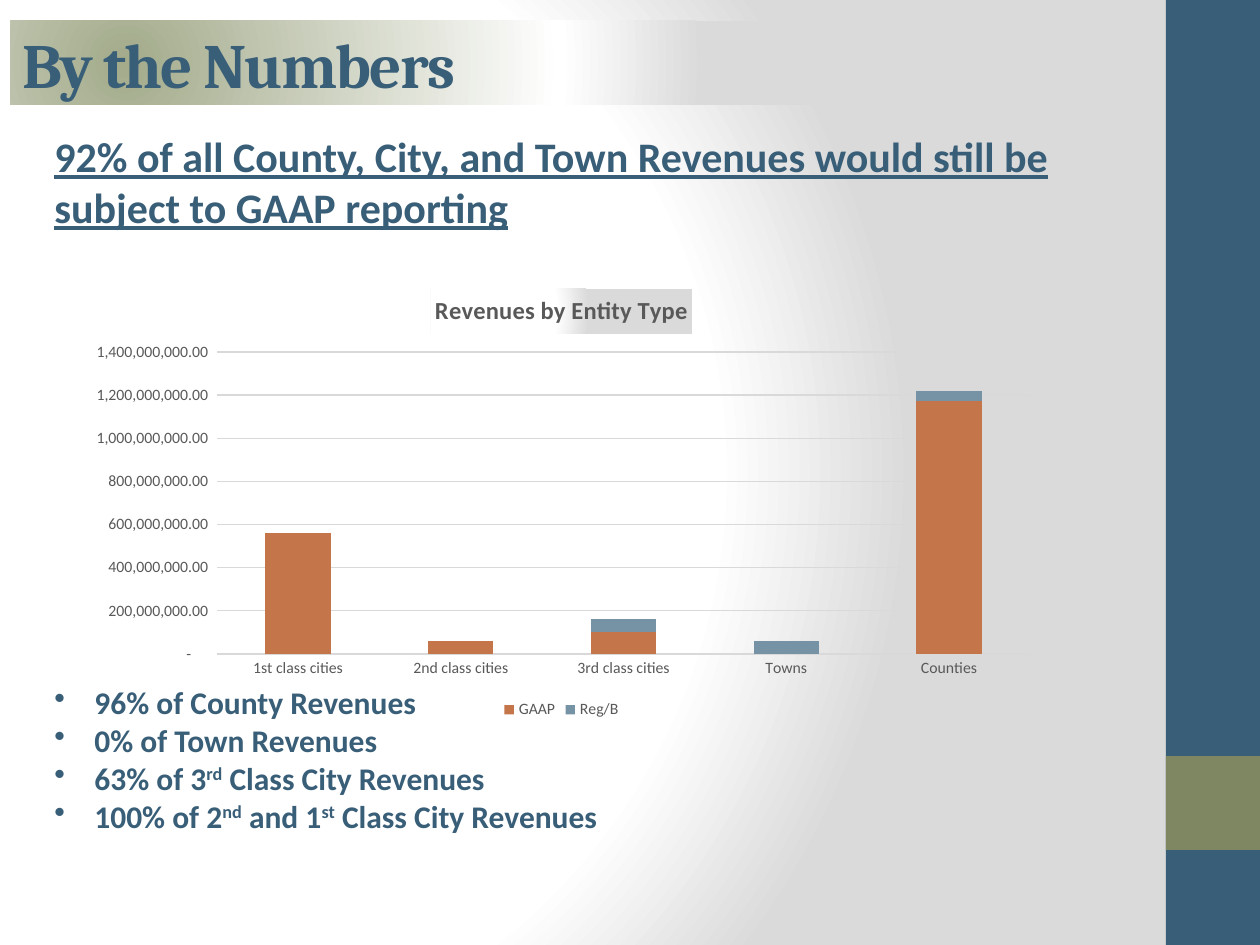
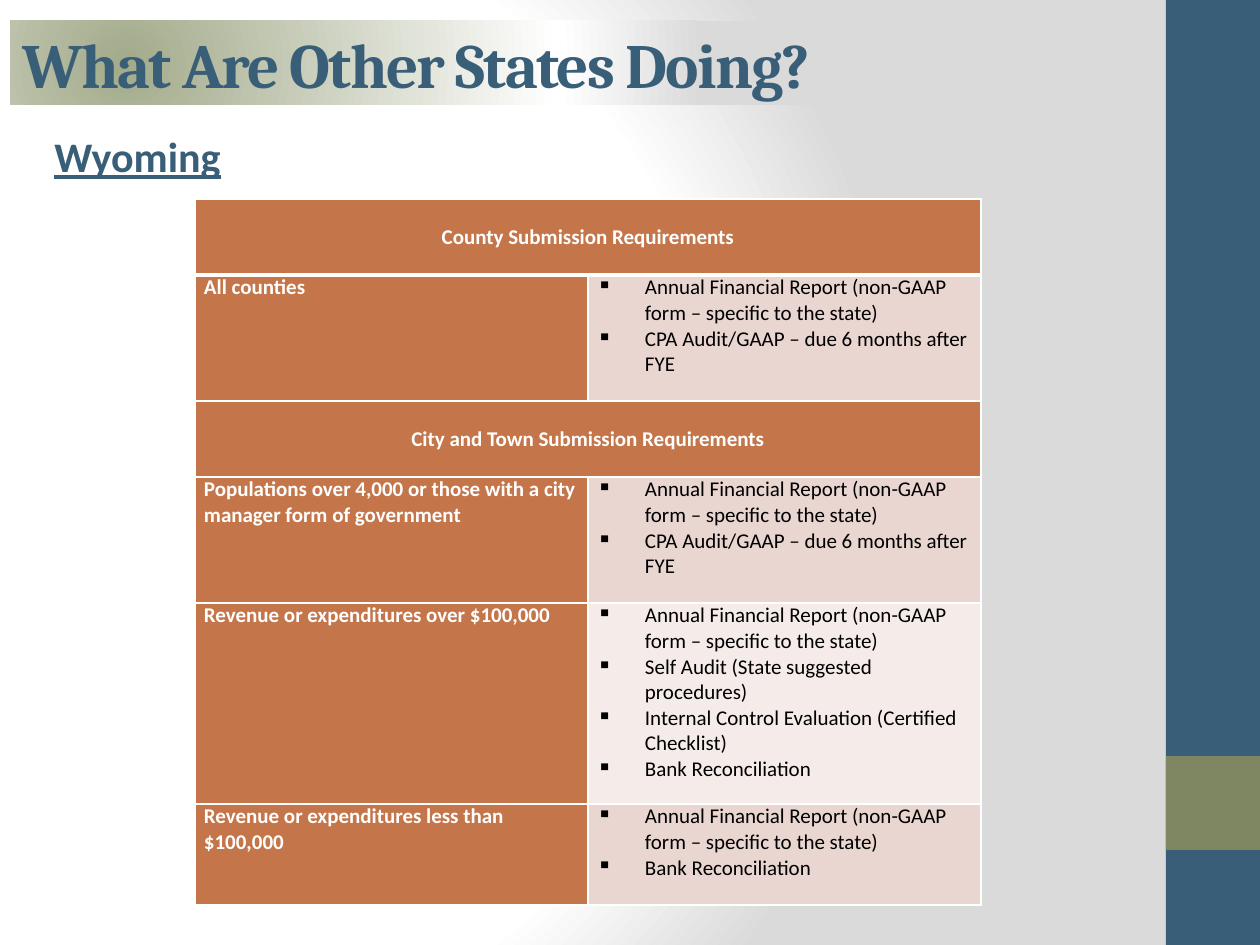
from lxml import etree
from pptx import Presentation
from pptx.chart.data import CategoryChartData
from pptx.dml.color import RGBColor
from pptx.enum.chart import XL_CHART_TYPE, XL_LEGEND_POSITION, XL_TICK_MARK
from pptx.enum.shapes import MSO_SHAPE
from pptx.enum.text import MSO_ANCHOR, MSO_AUTO_SIZE, PP_ALIGN
from pptx.oxml import parse_xml
from pptx.oxml.ns import nsdecls, qn
from pptx.util import Pt

RECT = MSO_SHAPE.RECTANGLE
STACKED = XL_CHART_TYPE.COLUMN_STACKED
BOTTOM = XL_LEGEND_POSITION.BOTTOM
NO_TICK = XL_TICK_MARK.NONE
MIDDLE, TOP = MSO_ANCHOR.MIDDLE, MSO_ANCHOR.TOP
FIXED = MSO_AUTO_SIZE.NONE
LEFT, CENTER = PP_ALIGN.LEFT, PP_ALIGN.CENTER

SCALE = 914400 / 126
WIDE, HIGH = 1260, 945
HEAD, BODY = "Cambria", "Calibri"
HUES = {
    "navy": "395E78", "olive": "7E8762", "sage": "A3AB8B",
    "white": "FFFFFF", "mist": "DADADA", "rule": "D9D9D9",
    "gray": "595959", "black": "000000", "rust": "C4764A",
    "steel": "7593A5", "rose": "EAD6D0", "blush": "F5ECE9",
}
BANDS = [("navy", 0, HIGH), ("olive", 756, 94)]
BAND_X = 1166

NUMBERS = {
    "title": "By the Numbers",
    "lead": "92% of all County, City, and Town Revenues would still be "
            "subject to GAAP reporting",
    # A leading ^ marks a superscript run.
    "points": [
        ["96% of County Revenues"],
        ["0% of Town Revenues"],
        ["63% of 3", "^rd", " Class City Revenues"],
        ["100% of 2", "^nd", " and 1", "^st", " Class City Revenues"],
    ],
}
CHART = {
    "title": "Revenues by Entity Type",
    "box": (73, 273, 977, 451),
    "plot": (217, 352, 814, 302),
    "cats": ["1st class cities", "2nd class cities", "3rd class cities",
             "Towns", "Counties"],
    "series": [
        ("GAAP", "rust", [560e6, 60e6, 100e6, 0, 1170e6]),
        ("Reg/B", "steel", [0, 0, 60e6, 60e6, 50e6]),
    ],
    "format": '_(* #,##0.00_);_(* \\(#,##0.00\\);_(* "-"??_);_(@_)',
}

REPORT = "Annual Financial Report (non-GAAP form – specific to the state)"
AUDIT = "CPA Audit/GAAP – due 6 months after FYE"
BANK = "Bank Reconciliation"
STATES = {"title": "What Are Other States Doing?", "lead": "Wyoming"}
TABLE_X, TABLE_Y, COL = 195, 199, 393
# Height, label, fill of the right cell, items; a row without items is a heading.
ROWS = [
    (76, "County Submission Requirements", None, []),
    (126, "All counties", "rose", [REPORT, AUDIT]),
    (76, "City and Town Submission Requirements", None, []),
    (126, "Populations over 4,000 or those with a city manager form of "
          "government", "rose", [REPORT, AUDIT]),
    (201, "Revenue or expenditures over $100,000", "blush",
     [REPORT, "Self Audit (State suggested procedures)",
      "Internal Control Evaluation (Certified Checklist)", BANK]),
    (101, "Revenue or expenditures less than $100,000", "rose",
     [REPORT, BANK]),
]


def px(*vals):
    return [round(v * SCALE) for v in vals]


def rgb(hue):
    return RGBColor.from_string(HUES[hue])


def paint(fill, hue):
    fill.solid()
    fill.fore_color.rgb = rgb(hue)


def wash(fill, root, hue):
    """Fill with a round gradient; call before root holds any coloured text."""
    fill.solid()
    stops = "".join(
        f'<a:gs pos="{pos}"><a:srgbClr val="{HUES[name]}"/></a:gs>'
        for pos, name in [(0, hue), (75000, "white"), (100000, "mist")])
    grad = parse_xml(
        f'<a:gradFill {nsdecls("a")} rotWithShape="1"><a:gsLst>{stops}</a:gsLst>'
        '<a:path path="circle"><a:fillToRect l="20000" t="50000" r="100000" '
        'b="50000"/></a:path></a:gradFill>')
    old = root.find(".//" + qn("a:solidFill"))
    old.getparent().replace(old, grad)


def style(font, size, hue, bold=False, face=BODY):
    font.size, font.bold, font.name = Pt(size), bold, face
    font.color.rgb = rgb(hue)


def write(para, runs, size, hue, bold=False, face=BODY):
    for text in runs:
        run = para.add_run()
        run.text = text.lstrip("^")
        style(run.font, size, hue, bold, face)
        if text.startswith("^"):
            run._r.get_or_add_rPr().set("baseline", "30000")


def bullet(para, mark, gap):
    props = para._p.get_or_add_pPr()
    props.set("marL", str(px(gap)[0]))
    props.set("indent", str(px(-gap)[0]))
    etree.SubElement(props, qn("a:buChar")).set("char", mark)


def paras(frame, count):
    """Return count paragraphs of a frame that starts with one."""
    return [frame.paragraphs[0]] + [
        frame.add_paragraph() for _ in range(count - 1)]


def start(prs, page, high):
    """Add a slide with its bands, title and body text box."""
    slide = prs.slides.add_slide(prs.slide_layouts[5])
    for hue, y, tall in BANDS:
        band = slide.shapes.add_shape(
            RECT, *px(BAND_X, y, WIDE - BAND_X, tall))
        band.shadow.inherit = False
        paint(band.fill, hue)
        band.line.fill.background()

    title = slide.shapes.title
    title.left, title.top, title.width, title.height = px(10, 21, 1155, 84)
    wash(title.fill, title.element, "sage")
    frame = title.text_frame
    frame.auto_size, frame.vertical_anchor = FIXED, MIDDLE
    para = frame.paragraphs[0]
    para.alignment = LEFT
    write(para, [page["title"]], 36, "navy", True, HEAD)
    para.runs[0]._r.get_or_add_rPr().set("spc", "-100")

    frame = slide.shapes.add_textbox(*px(42, 105, 1113, high)).text_frame
    frame.word_wrap = True
    frame.margin_top = px(26)[0]
    points = page.get("points", [])
    lead, *rest = paras(frame, 1 + len(points))
    write(lead, [page["lead"]], 24, "navy", True)
    lead.runs[0].font.underline = True
    for i, (para, runs) in enumerate(zip(rest, points)):
        para.space_before = Pt(0 if i else 258)
        bullet(para, "•", 40)
        write(para, runs, 18, "navy", True)
    return slide


def place(chart):
    """Fix the inner plot area inside the chart box."""
    x, y, w, h = CHART["box"]
    left, top, wide, tall = CHART["plot"]
    parts = {"x": (left - x) / w, "y": (top - y) / h,
             "w": wide / w, "h": tall / h}
    area = chart.plots[0]._element.getparent()
    for old in area.findall(qn("c:layout")):
        area.remove(old)
    sizes = "".join(f'<c:{k} val="{v:.3f}"/>' for k, v in parts.items())
    area.insert(0, parse_xml(
        f'<c:layout {nsdecls("c")}><c:manualLayout>'
        '<c:layoutTarget val="inner"/><c:xMode val="edge"/>'
        f'<c:yMode val="edge"/>{sizes}</c:manualLayout></c:layout>'))


def add_chart(slide):
    data = CategoryChartData(number_format=CHART["format"])
    data.categories = CHART["cats"]
    for name, _, vals in CHART["series"]:
        data.add_series(name, vals)
    chart = slide.shapes.add_chart(STACKED, *px(*CHART["box"]), data).chart
    style(chart.font, 10, "black")
    chart.has_title = True
    title = chart.chart_title
    title.include_in_layout = False
    wash(title.format.fill, title._element, "white")
    write(title.text_frame.paragraphs[0], [CHART["title"]], 14, "gray", True)

    plot = chart.plots[0]
    plot.gap_width, plot.overlap, plot.vary_by_categories = 150, 100, False
    for series, (_, hue, _) in zip(plot.series, CHART["series"]):
        paint(series.format.fill, hue)
        series.invert_if_negative = False

    cats, vals = chart.category_axis, chart.value_axis
    for axis in (cats, vals):
        axis.major_tick_mark = axis.minor_tick_mark = NO_TICK
        style(axis.tick_labels.font, 9, "gray")
    vals.minimum_scale, vals.maximum_scale, vals.major_unit = 0, 14e8, 2e8
    vals.tick_labels.number_format = CHART["format"]
    vals.tick_labels.number_format_is_linked = False
    vals.format.line.fill.background()
    for line in (cats.format.line, vals.major_gridlines.format.line):
        line.width = Pt(0.75)
        line.color.rgb = rgb("rule")

    chart.has_legend = True
    chart.legend.position = BOTTOM
    chart.legend.include_in_layout = False
    style(chart.legend.font, 9, "gray")
    place(chart)


def edge(cell, row):
    """Draw white borders, heavier under the first row."""
    heavy = {(0, "B"), (1, "T")}
    props = cell._tc.get_or_add_tcPr()
    for i, side in enumerate("LRTB"):
        width = Pt(3 if (row, side) in heavy else 1)
        props.insert(i, parse_xml(
            f'<a:ln{side} {nsdecls("a")} w="{width}"><a:solidFill>'
            f'<a:srgbClr val="{HUES["white"]}"/></a:solidFill></a:ln{side}>'))


def add_table(slide):
    tall = sum(row[0] for row in ROWS)
    table = slide.shapes.add_table(
        len(ROWS), 2, *px(TABLE_X, TABLE_Y, 2 * COL, tall)).table
    for col in table.columns:
        col.width = px(COL)[0]
    for r, (high, label, hue, items) in enumerate(ROWS):
        table.rows[r].height = px(high)[0]
        name, list_cell = table.cell(r, 0), table.cell(r, 1)
        for cell, fill in ((name, "rust"), (list_cell, hue or "rust")):
            cell.margin_left = cell.margin_right = px(9)[0]
            cell.margin_top = cell.margin_bottom = 0
            cell.vertical_anchor = TOP if items else MIDDLE
            paint(cell.fill, fill)
            edge(cell, r)
        para = name.text_frame.paragraphs[0]
        write(para, [label], 12, "white", True)
        if not items:
            para.alignment = CENTER
            name.merge(list_cell)
            continue
        for para, item in zip(paras(list_cell.text_frame, len(items)), items):
            bullet(para, "▪", 48)
            write(para, [item], 12, "black")


def main():
    prs = Presentation()
    prs.slide_width, prs.slide_height = px(WIDE, HIGH)
    master = prs.slide_master
    wash(master.background.fill, master.element, "white")
    add_chart(start(prs, NUMBERS, 742))
    add_table(start(prs, STATES, 237))
    prs.save("out.pptx")


if __name__ == "__main__":
    main()
